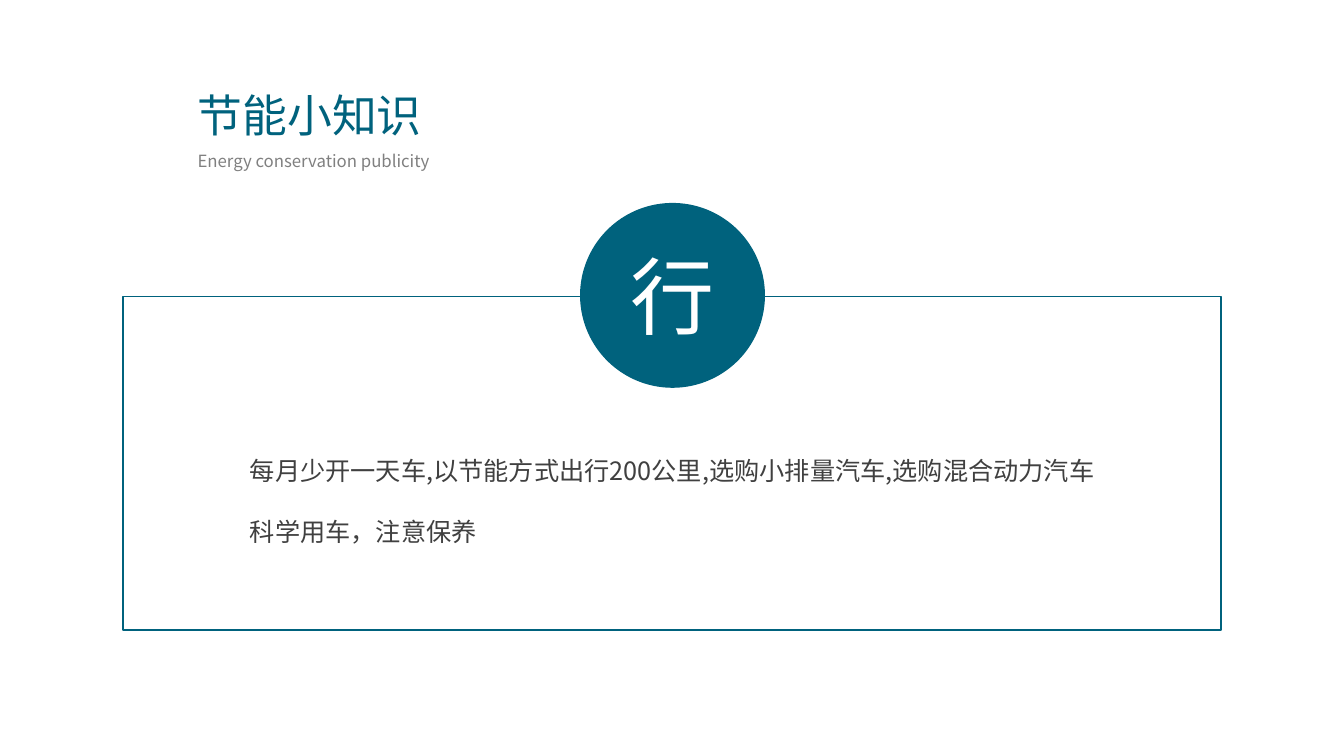
from dataclasses import dataclass

from lxml import etree
from pptx import Presentation
from pptx import util as u
from pptx.dml.color import RGBColor
from pptx.enum import shapes, text
from pptx.oxml.ns import qn


@dataclass(frozen=True)
class Theme:
    font: str = "Noto Sans CJK SC"
    teal: str = "00627D"
    body_grey: str = "404040"
    subtitle_grey: str = "808080"
    white: str = "FFFFFF"
    badge_size: int = 60
    title_size: int = 32
    body_size: int = 18
    subtitle_size: int = 12
    outline: int = 1


THEME = Theme()


def inches(*lengths):
    return [u.Inches(length) for length in lengths]


def write(frame, content, size, color, align=text.PP_ALIGN.LEFT, spacing=1.0):
    """Fill a text frame, one paragraph per line, in the theme font."""
    frame.text = content
    for paragraph in frame.paragraphs:
        paragraph.alignment = align
        paragraph.line_spacing = spacing
        for run in paragraph.runs:
            run.font.size = u.Pt(size)
            run.font.color.rgb = RGBColor.from_string(color)
            run.font.name = THEME.font
            east_asian = etree.SubElement(run.font._element, qn("a:ea"))
            east_asian.set("typeface", THEME.font)


def set_margins(frame, left, top, right, bottom):
    frame.margin_left, frame.margin_top, frame.margin_right, frame.margin_bottom = inches(
        left, top, right, bottom)


def add_title(slide, box, content):
    title = slide.shapes.title
    title.left, title.top, title.width, title.height = inches(*box)
    frame = title.text_frame
    frame.auto_size = text.MSO_AUTO_SIZE.NONE
    frame.vertical_anchor = text.MSO_ANCHOR.MIDDLE
    set_margins(frame, 0, 0, 0, 0)
    write(frame, content, THEME.title_size, THEME.teal)


def add_text(slide, box, content, size, color, spacing, wrap=True):
    frame = slide.shapes.add_textbox(*inches(*box)).text_frame
    frame.word_wrap = wrap
    write(frame, content, size, color, spacing=spacing)
    return frame


def add_outlined(slide, preset, box, fill=None):
    shape = slide.shapes.add_shape(preset, *inches(*box))
    shape.shadow.inherit = False
    shape.line.color.rgb = RGBColor.from_string(THEME.teal)
    shape.line.width = u.Pt(THEME.outline)
    if fill:
        shape.fill.solid()
        shape.fill.fore_color.rgb = RGBColor.from_string(fill)
    else:
        shape.fill.background()
    return shape


def main():
    deck = Presentation()
    deck.slide_width, deck.slide_height = inches(13.33, 7.5)
    slide = deck.slides.add_slide(deck.slide_layouts[5])

    # Heading
    add_title(slide, (1.96, 0.87, 5.91, 0.54), "节能小知识")
    subtitle = add_text(slide, (1.96, 1.35, 2.76, 0.68), "Energy conservation publicity",
                        THEME.subtitle_size, THEME.subtitle_grey, 1.5, wrap=False)
    set_margins(subtitle, 0, 0.05, 0.1, 0.05)

    # Framed travel tips
    add_text(slide, (2.38, 4.17, 8.58, 1.83),
             "每月少开一天车,以节能方式出行200公里,选购小排量汽车,选购混合动力汽车\n"
             "科学用车，注意保养",
             THEME.body_size, THEME.body_grey, 2.0)
    add_outlined(slide, shapes.MSO_SHAPE.RECTANGLE, (1.22, 2.94, 10.89, 3.31))

    # Round badge on the top edge of the frame
    badge = add_outlined(slide, shapes.MSO_SHAPE.OVAL, (5.76, 2.02, 1.82, 1.82), THEME.teal)
    badge.text_frame.vertical_anchor = text.MSO_ANCHOR.MIDDLE
    write(badge.text_frame, "行", THEME.badge_size, THEME.white, text.PP_ALIGN.CENTER)

    deck.save("out.pptx")


if __name__ == "__main__":
    main()
